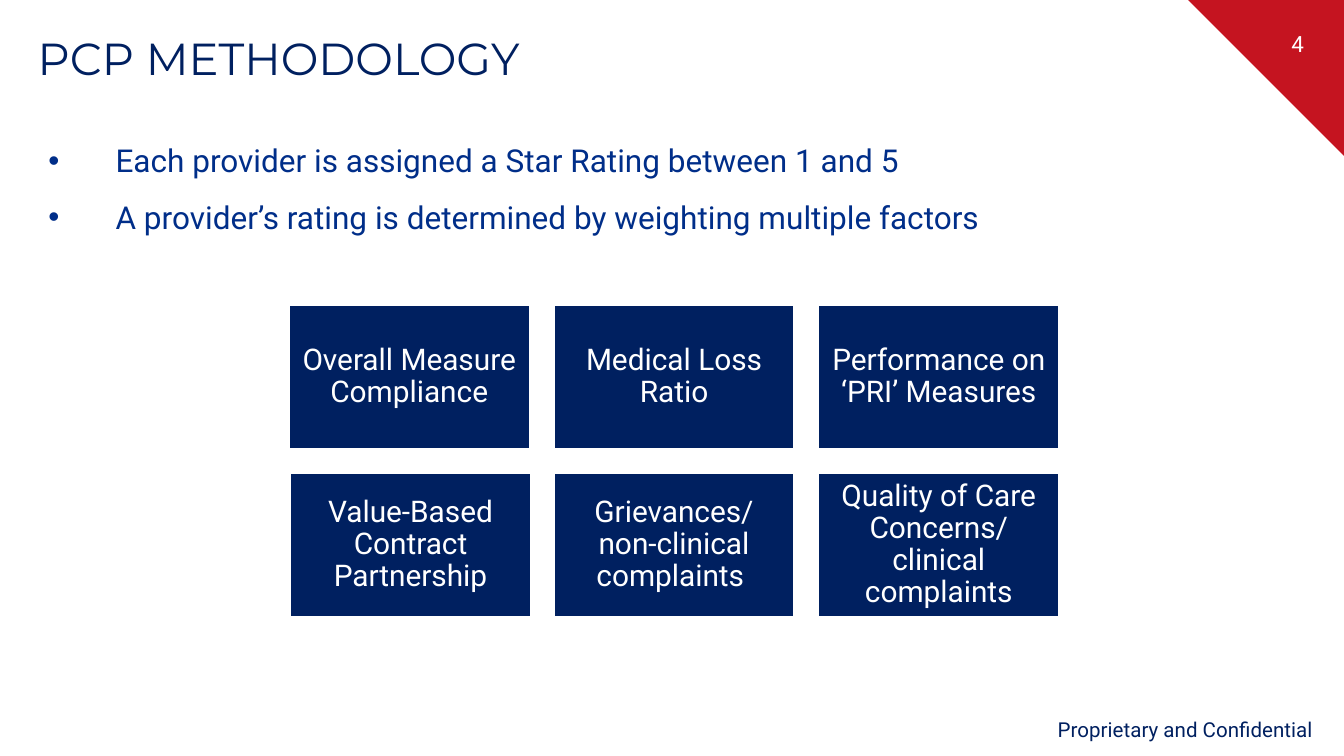
from lxml import etree
from pptx import Presentation
from pptx.dml.color import RGBColor
from pptx.enum.shapes import MSO_SHAPE
from pptx.enum.text import MSO_ANCHOR, PP_ALIGN
from pptx.oxml.ns import qn
from pptx.util import Inches, Pt

RECTANGLE, TRIANGLE = MSO_SHAPE.RECTANGLE, MSO_SHAPE.RIGHT_TRIANGLE
TOP, MIDDLE = MSO_ANCHOR.TOP, MSO_ANCHOR.MIDDLE
LEFT, CENTER = PP_ALIGN.LEFT, PP_ALIGN.CENTER
COLORS = {"navy": "002060", "blue": "002E89", "red": "C51420", "white": "FFFFFF"}


def write(box, lines, size=16, color="navy", font="Roboto", align=LEFT, anchor=TOP,
          margins=(0, 0), spacing=1.0, gap=0, bullet=None):
    frame = box.text_frame
    frame.word_wrap = True
    frame.vertical_anchor = anchor
    frame.margin_left = frame.margin_right = Inches(margins[0])
    frame.margin_top = frame.margin_bottom = Inches(margins[1])
    for index, line in enumerate(lines):
        para = frame.add_paragraph() if index else frame.paragraphs[0]
        para.alignment = align
        para.line_spacing = spacing
        para.space_before = Pt(gap if index else 0)
        para.space_after = Pt(0)
        if bullet:
            properties = para._p.get_or_add_pPr()
            properties.set("marL", str(Inches(0.5)))
            properties.set("indent", str(-Inches(0.5)))
            etree.SubElement(properties, qn("a:buChar")).set("char", bullet)
        span = para.add_run()
        span.text = line
        span.font.size = Pt(size)
        span.font.name = font
        span.font.bold = False
        span.font.color.rgb = RGBColor.from_string(COLORS[color])


def add_block(shapes, kind, left, top, width, height, fill):
    block = shapes.add_shape(kind, Inches(left), Inches(top), Inches(width), Inches(height))
    block.shadow.inherit = False
    block.fill.solid()
    block.fill.fore_color.rgb = RGBColor.from_string(COLORS[fill])
    block.line.fill.background()
    return block


deck = Presentation()
deck.slide_width = Inches(10)
deck.slide_height = Inches(10) * 9 // 16
page = deck.slides.add_slide(deck.slide_layouts[1])
shapes = page.shapes

corner = add_block(shapes, TRIANGLE, 8.84, 0, 1.16, 1.16, "red")
corner.rotation = 180

number = shapes.add_textbox(Inches(9.31), Inches(0), Inches(0.69), Inches(0.65))
write(number, ["4"], size=12, color="white", align=CENTER, anchor=MIDDLE, margins=(0.1, 0.05))

footer = shapes.add_textbox(Inches(7.87), Inches(5.3), Inches(2.02), Inches(0.25))
write(footer, ["Proprietary and Confidential"], size=11, spacing=1.2)

title = shapes.title
title.left, title.top, title.width, title.height = Inches(0.28), Inches(0.27), Inches(8.46), Inches(0.35)
write(title, ["PCP METHODOLOGY"], size=24, font="Montserrat", spacing=0.9)

body = page.placeholders[1]
body.left, body.top, body.width, body.height = Inches(0.28), Inches(1.05), Inches(9.17), Inches(0.77)
write(body, ["Each provider is assigned a Star Rating between 1 and 5",
             "A provider’s rating is determined by weighting multiple factors"],
      size=16.9, color="blue", margins=(0.08, 0), gap=10, bullet="•")

factor_rows = [
    (2.27, [(2.15, "Overall Measure Compliance"),
            (4.12, "Medical Loss Ratio"),
            (6.09, "Performance on ‘PRI’ Measures")]),
    (3.52, [(2.16, "Value-Based Contract Partnership"),
            (4.12, "Grievances/ non-clinical complaints "),
            (6.09, "Quality of Care Concerns/ clinical complaints")]),
]
for top, factors in factor_rows:
    for left, label in factors:
        factor = add_block(shapes, RECTANGLE, left, top, 1.79, 1.07, "navy")
        factor.line.color.rgb = RGBColor.from_string(COLORS["white"])
        factor.line.width = Pt(1)
        write(factor, [label], color="white", align=CENTER, anchor=MIDDLE,
              margins=(0.07, 0.07), spacing=0.9)

deck.save("out.pptx")
